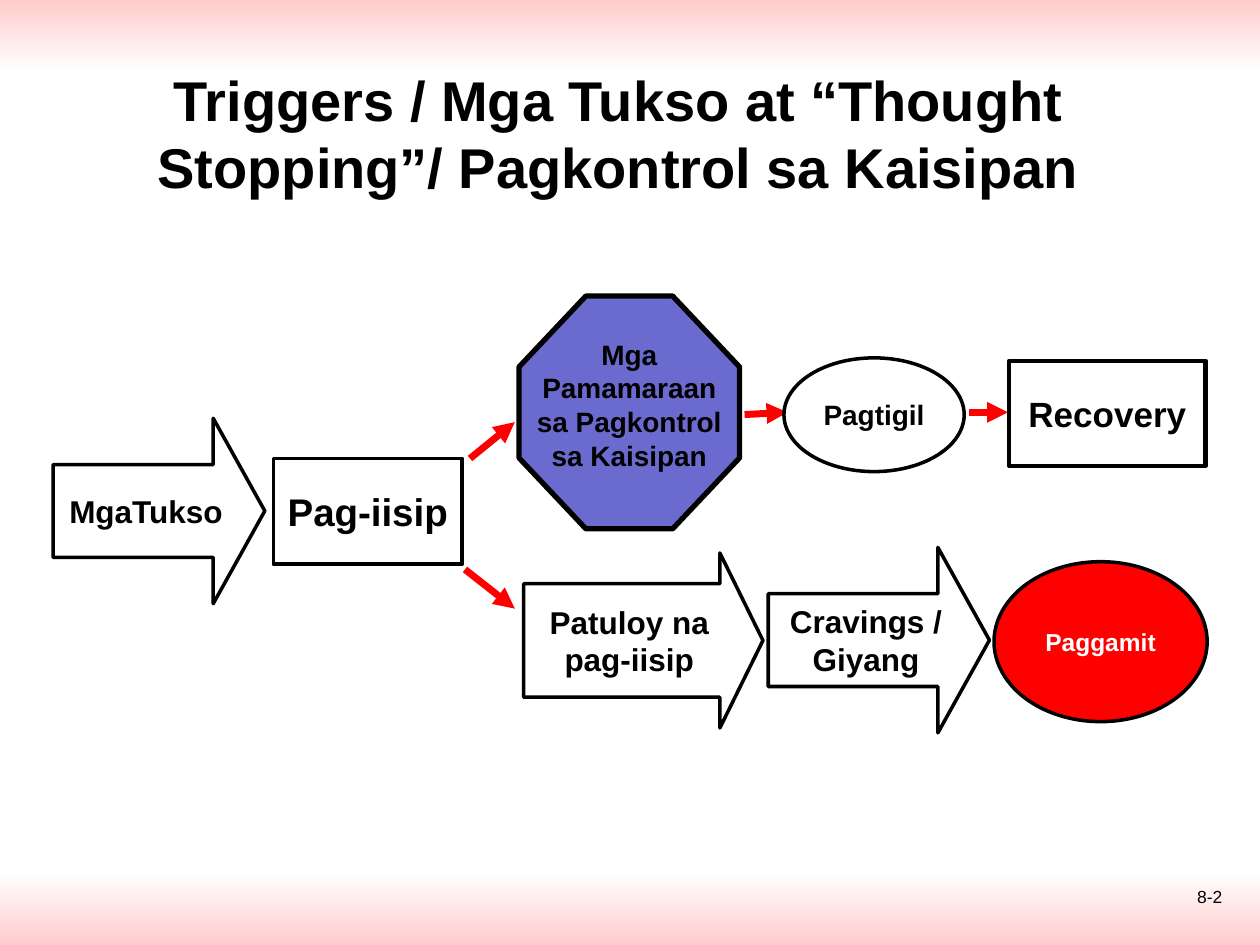
from lxml import etree
from pptx import Presentation
from pptx.dml.color import RGBColor
from pptx.enum.shapes import MSO_CONNECTOR, MSO_SHAPE
from pptx.enum.text import MSO_ANCHOR, PP_ALIGN
from pptx.oxml.ns import qn
from pptx.util import Pt

RECTANGLE = MSO_SHAPE.RECTANGLE
ELLIPSE = MSO_SHAPE.OVAL
BLOCK_ARROW = MSO_SHAPE.RIGHT_ARROW
STRAIGHT = MSO_CONNECTOR.STRAIGHT
CENTER, RIGHT = PP_ALIGN.CENTER, PP_ALIGN.RIGHT
MIDDLE, TOP = MSO_ANCHOR.MIDDLE, MSO_ANCHOR.TOP

BLACK = RGBColor(0x00, 0x00, 0x00)
WHITE = RGBColor(0xFF, 0xFF, 0xFF)
RED = RGBColor(0xFF, 0x00, 0x00)
PINK = RGBColor(0xFF, 0xCC, 0xCC)
VIOLET = RGBColor(0x6B, 0x6B, 0xCF)

FONT = "Arial"
WIDTH, HEIGHT = 720, 540
BAND_HEIGHT = 41.8


def write_text(shape, text, size=18, color=BLACK, bold=True, align=CENTER,
               anchor=MIDDLE, wrap=True, bottom=3.6):
    """Put one formatted paragraph into a shape."""
    frame = shape.text_frame
    frame.word_wrap = wrap
    frame.vertical_anchor = anchor
    frame.margin_bottom = Pt(bottom)
    paragraph = frame.paragraphs[0]
    paragraph.alignment = align
    run = paragraph.add_run()
    run.text = text
    run.font.name = FONT
    run.font.size = Pt(size)
    run.font.bold = bold
    run.font.color.rgb = color


class FlowSlide:
    """Holds the current slide and the style of its elements."""

    def __init__(self, slide, line_width=2, arrow_width=4):
        self.slide = slide
        self.line_width = line_width
        self.arrow_width = arrow_width

    def style(self, shape, fill, line_width):
        shape.shadow.inherit = False
        shape.fill.solid()
        shape.fill.fore_color.rgb = fill
        shape.line.color.rgb = BLACK
        shape.line.width = Pt(line_width)

    def band(self, top, start, end):
        shape = self.slide.shapes.add_shape(
            RECTANGLE, 0, Pt(top), Pt(WIDTH), Pt(BAND_HEIGHT))
        shape.shadow.inherit = False
        shape.line.fill.background()
        shape.fill.gradient()
        shape.fill.gradient_angle = 270  # counter-clockwise, so top to bottom
        for stop, color in zip(shape.fill.gradient_stops, (start, end)):
            stop.color.rgb = color

    def text(self, text, left, top, width, height, **text_format):
        box = self.slide.shapes.add_textbox(
            Pt(left), Pt(top), Pt(width), Pt(height))
        write_text(box, text, **text_format)

    def node(self, kind, text, left, top, width, height, fill=WHITE,
             line_width=None, adjustments=(), **text_format):
        shape = self.slide.shapes.add_shape(
            kind, Pt(left), Pt(top), Pt(width), Pt(height))
        for index, value in enumerate(adjustments):
            shape.adjustments[index] = value
        self.style(shape, fill, line_width or self.line_width)
        # Single words stay on one line
        write_text(shape, text, wrap=" " in text, **text_format)

    def octagon(self, text, left, top, width, height, corner_x, corner_y,
                fill, line_width, **text_format):
        right, bottom = left + width, top + height
        points = [
            (right - corner_x, top), (left + corner_x, top),
            (left, top + corner_y), (left, bottom - corner_y),
            (left + corner_x, bottom), (right - corner_x, bottom),
            (right, bottom - corner_y), (right, top + corner_y),
        ]
        points = [(Pt(x), Pt(y)) for x, y in points]
        builder = self.slide.shapes.build_freeform(*points[0])
        builder.add_line_segments(points[1:], close=True)
        shape = builder.convert_to_shape()
        self.style(shape, fill, line_width)
        write_text(shape, text, **text_format)

    def arrow(self, start_x, start_y, end_x, end_y):
        connector = self.slide.shapes.add_connector(
            STRAIGHT, Pt(start_x), Pt(start_y), Pt(end_x), Pt(end_y))
        connector.line.color.rgb = RED
        connector.line.width = Pt(self.arrow_width)
        line = connector.line._get_or_add_ln()
        etree.SubElement(line, qn("a:tailEnd"), type="triangle")
        etree.SubElement(connector._element.spPr, qn("a:effectLst"))


def main():
    presentation = Presentation()
    presentation.slide_width = Pt(WIDTH)
    presentation.slide_height = Pt(HEIGHT)
    flow = FlowSlide(presentation.slides.add_slide(presentation.slide_layouts[6]))

    # Background bands
    flow.band(HEIGHT - BAND_HEIGHT, WHITE, PINK)
    flow.band(0, PINK, WHITE)

    # Trigger and thought
    flow.node(BLOCK_ARROW, "MgaTukso", 30.3, 239, 121, 106,
              adjustments=(0.5, 0.278))
    flow.node(RECTANGLE, "Pag-iisip", 156.2, 262, 108, 60.4, size=22)

    # Lower path: continued thinking to use
    flow.arrow(265.7, 325.4, 294.2, 347.8)
    flow.node(BLOCK_ARROW, "Patuloy na pag-iisip", 299.2, 316, 136.8, 100,
              adjustments=(0.648, 0.246))
    flow.node(BLOCK_ARROW, "Cravings / Giyang", 439, 312.8, 126.4, 106,
              adjustments=(0.5, 0.278))
    flow.node(ELLIPSE, "Paggamit", 568, 321, 121.8, 91.4, fill=RED,
              size=14, color=WHITE)

    # Upper path: thought stopping to recovery
    flow.arrow(268.6, 262, 294.2, 241.2)
    flow.octagon("Mga Pamamaraan sa Pagkontrol sa Kaisipan",
                 296.6, 169.2, 126, 133, 38.2, 40.5, fill=VIOLET,
                 line_width=3, size=16, bottom=12.5)
    flow.arrow(425.5, 236.9, 450, 235.6)
    flow.node(ELLIPSE, "Pagtigil", 448, 204.5, 103, 65, size=16)
    flow.arrow(553.7, 235.6, 576, 235.6)
    flow.node(RECTANGLE, "Recovery", 576.6, 206.2, 112.4, 60, line_width=2.5,
              size=20)

    # Title and page number
    flow.text("Triggers / Mga Tukso at “Thought Stopping”/ Pagkontrol sa Kaisipan",
              50.4, 41.5, 606.2, 68.4, size=32)
    flow.text("8-2", 537.8, 502.6, 167.8, 37.4, size=10, bold=False,
              align=RIGHT, anchor=TOP)

    presentation.save("out.pptx")


if __name__ == "__main__":
    main()
